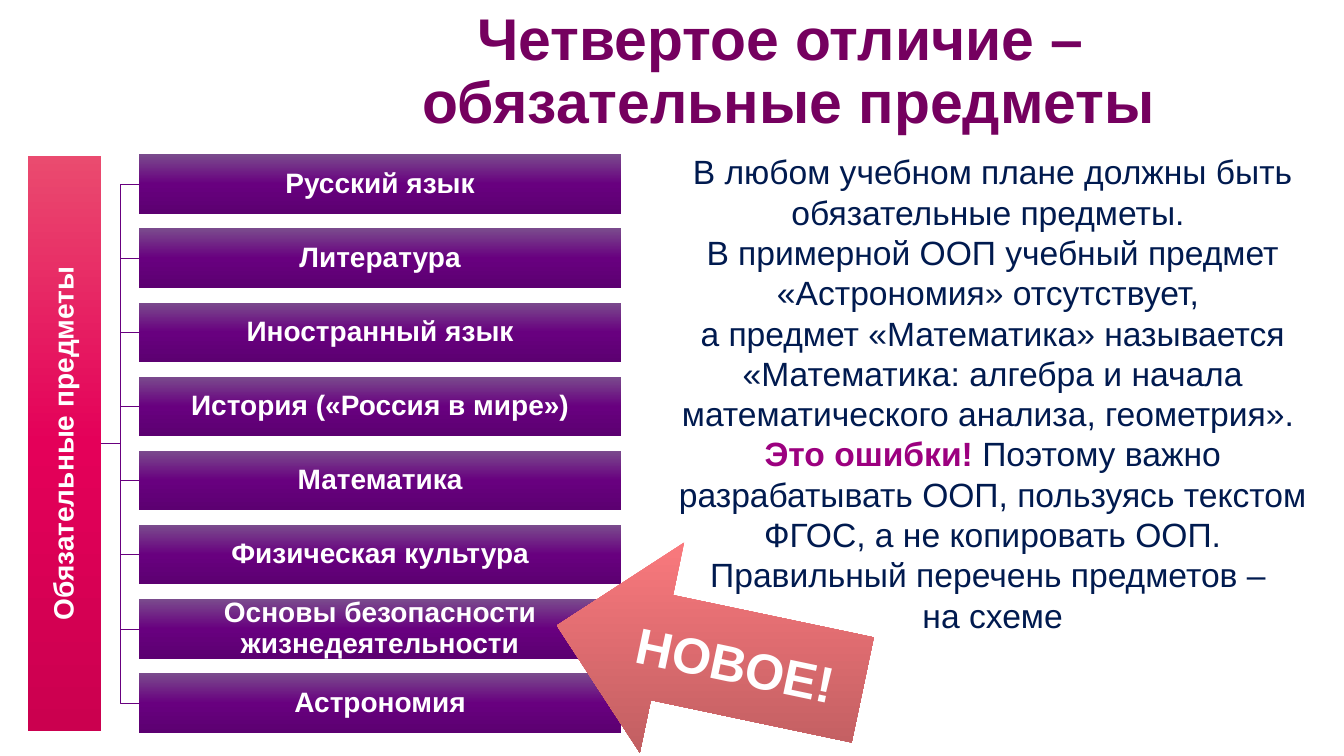
from dataclasses import dataclass

from lxml import etree
from pptx import Presentation
from pptx import util as u
from pptx.dml.color import RGBColor
from pptx.enum import shapes, text
from pptx.oxml.ns import qn


@dataclass(frozen=True)
class Theme:
    font: str = "Arial"
    title_color: str = "75005F"
    body_color: str = "001A4F"
    accent: str = "9C007F"
    white: str = "FFFFFF"
    line: str = "68007F"
    root_fill: tuple = ((0, "EA4B6F"), (50, "E40059"), (100, "CB004F"))
    subject_fill: tuple = ((0, "7A4B8D"), (50, "68007F"), (100, "5C0071"))
    arrow_fill: tuple = ((0, "FF7C80"), (100, "B6595C"))
    title_size: int = 42
    body_size: int = 24
    label_size: int = 20
    arrow_size: int = 36


THEME = Theme()

SUBJECTS = [
    "Русский язык",
    "Литература",
    "Иностранный язык",
    "История («Россия в мире»)",
    "Математика",
    "Физическая культура",
    "Основы безопасности жизнедеятельности",
    "Астрономия",
]
ROOT_RIGHT, ROOT_MIDDLE = 1.0, 4.4
SUBJECT_LEFT, SUBJECT_WIDTH, SUBJECT_HEIGHT = 1.38, 4.78, 0.59
FIRST_TOP, LAST_TOP = 1.53, 6.68

COMMENTARY = [
    [("В любом учебном плане должны быть обязательные предметы. \n"
      "В примерной ООП учебный предмет «Астрономия» отсутствует, \n"
      "а предмет «Математика» называется «Математика: алгебра и начала "
      "математического анализа, геометрия». ", THEME.body_color, False)],
    [("Это ошибки! ", THEME.accent, True),
     ("Поэтому важно разрабатывать ООП, пользуясь текстом ФГОС, "
      "а не копировать ООП.", THEME.body_color, False)],
    [("Правильный перечень предметов – \nна схеме", THEME.body_color, False)],
]


def apply(target, values):
    for name, value in values.items():
        setattr(target, name, value)


def write_runs(paragraph, runs, size):
    """Fill a centred paragraph; a newline inside a run is a line break."""
    paragraph.alignment = text.PP_ALIGN.CENTER
    for content, color, bold in runs:
        for index, line in enumerate(content.split("\n")):
            if index:
                paragraph.add_line_break()
            run = paragraph.add_run()
            run.text = line
            apply(run.font, {"name": THEME.font, "size": u.Pt(size), "bold": bold})
            run.font.color.rgb = RGBColor.from_string(color)


def fill_vertical_gradient(shape, stops):
    """Run the gradient down the slide, whatever the shape's rotation."""
    shape.fill.gradient()
    gradient = shape._element.spPr.find(qn("a:gradFill"))
    gradient.set("rotWithShape", "0")
    stop_list = gradient.find(qn("a:gsLst"))
    for stop in list(stop_list):
        stop_list.remove(stop)
    for position, color in stops:
        stop = etree.SubElement(stop_list, qn("a:gs"), pos=str(position * 1000))
        etree.SubElement(stop, qn("a:srgbClr"), val=color)
    gradient.find(qn("a:lin")).set("ang", "5400000")


def add_block(slide, kind, box, label, stops, size, rotation=0):
    block = slide.shapes.add_shape(kind, *map(u.Inches, box))
    block.rotation = rotation
    block.shadow.inherit = False
    block.line.fill.background()
    fill_vertical_gradient(block, stops)
    block.text_frame.vertical_anchor = text.MSO_ANCHOR.MIDDLE
    write_runs(block.text_frame.paragraphs[0], [(label, THEME.white, True)], size)
    return block


def add_label_bar(slide, box, label, stops, rotation=0):
    bar = add_block(slide, shapes.MSO_SHAPE.RECTANGLE, box, label, stops,
                    THEME.label_size, rotation)
    inset = u.Inches(0.01)
    apply(bar.text_frame, {"word_wrap": True,
                           "margin_left": inset, "margin_right": inset,
                           "margin_top": inset, "margin_bottom": inset})
    bar.text_frame.paragraphs[0].line_spacing = 0.9


def add_branch(slide, middle):
    branch = slide.shapes.add_connector(
        shapes.MSO_CONNECTOR.ELBOW,
        *map(u.Inches, (ROOT_RIGHT, ROOT_MIDDLE, SUBJECT_LEFT, middle)))
    branch.line.color.rgb = RGBColor.from_string(THEME.line)
    branch.line.width = u.Pt(0.5)
    etree.SubElement(branch._element.spPr, qn("a:effectLst"))


def add_subject_tree(slide):
    pitch = (LAST_TOP - FIRST_TOP) / (len(SUBJECTS) - 1)
    tops = [FIRST_TOP + pitch * index for index in range(len(SUBJECTS))]
    for top in tops:
        add_branch(slide, top + SUBJECT_HEIGHT / 2)
    add_label_bar(slide, (-2.21, 4.04, 5.7, 0.72), "Обязательные предметы",
                  THEME.root_fill, rotation=270)
    for top, subject in zip(tops, SUBJECTS):
        add_label_bar(slide, (SUBJECT_LEFT, top, SUBJECT_WIDTH, SUBJECT_HEIGHT),
                      subject, THEME.subject_fill)


def set_title(slide, content):
    title = slide.shapes.title
    apply(title, {"left": u.Inches(2.29), "top": u.Inches(0.15),
                  "width": u.Inches(11.06), "height": u.Inches(1.15)})
    apply(title.text_frame, {"word_wrap": True,
                             "auto_size": text.MSO_AUTO_SIZE.NONE,
                             "vertical_anchor": text.MSO_ANCHOR.MIDDLE})
    heading = title.text_frame.paragraphs[0]
    apply(heading, {"line_spacing": 0.9, "space_before": u.Pt(0)})
    write_runs(heading, [(content, THEME.title_color, True)], THEME.title_size)


def add_commentary(slide):
    box = slide.shapes.add_textbox(*map(u.Inches, (6.42, 1.45, 6.85, 4.95)))
    frame = box.text_frame
    apply(frame, {"word_wrap": True,
                  "auto_size": text.MSO_AUTO_SIZE.SHAPE_TO_FIT_TEXT})
    for index, runs in enumerate(COMMENTARY):
        paragraph = frame.add_paragraph() if index else frame.paragraphs[0]
        write_runs(paragraph, runs, THEME.body_size)


def main():
    deck = Presentation()
    apply(deck, {"slide_width": u.Inches(13.33), "slide_height": u.Inches(7.5)})
    slide = deck.slides.add_slide(deck.slide_layouts[5])
    set_title(slide, "Четвертое отличие – \nобязательные предметы")
    add_subject_tree(slide)
    add_commentary(slide)
    new_arrow = add_block(slide, shapes.MSO_SHAPE.LEFT_ARROW,
                          (5.49, 5.46, 3.1, 2.13), "НОВОЕ!",
                          THEME.arrow_fill, THEME.arrow_size, rotation=11.9)
    new_arrow.text_frame.word_wrap = False
    deck.save("out.pptx")


if __name__ == "__main__":
    main()
